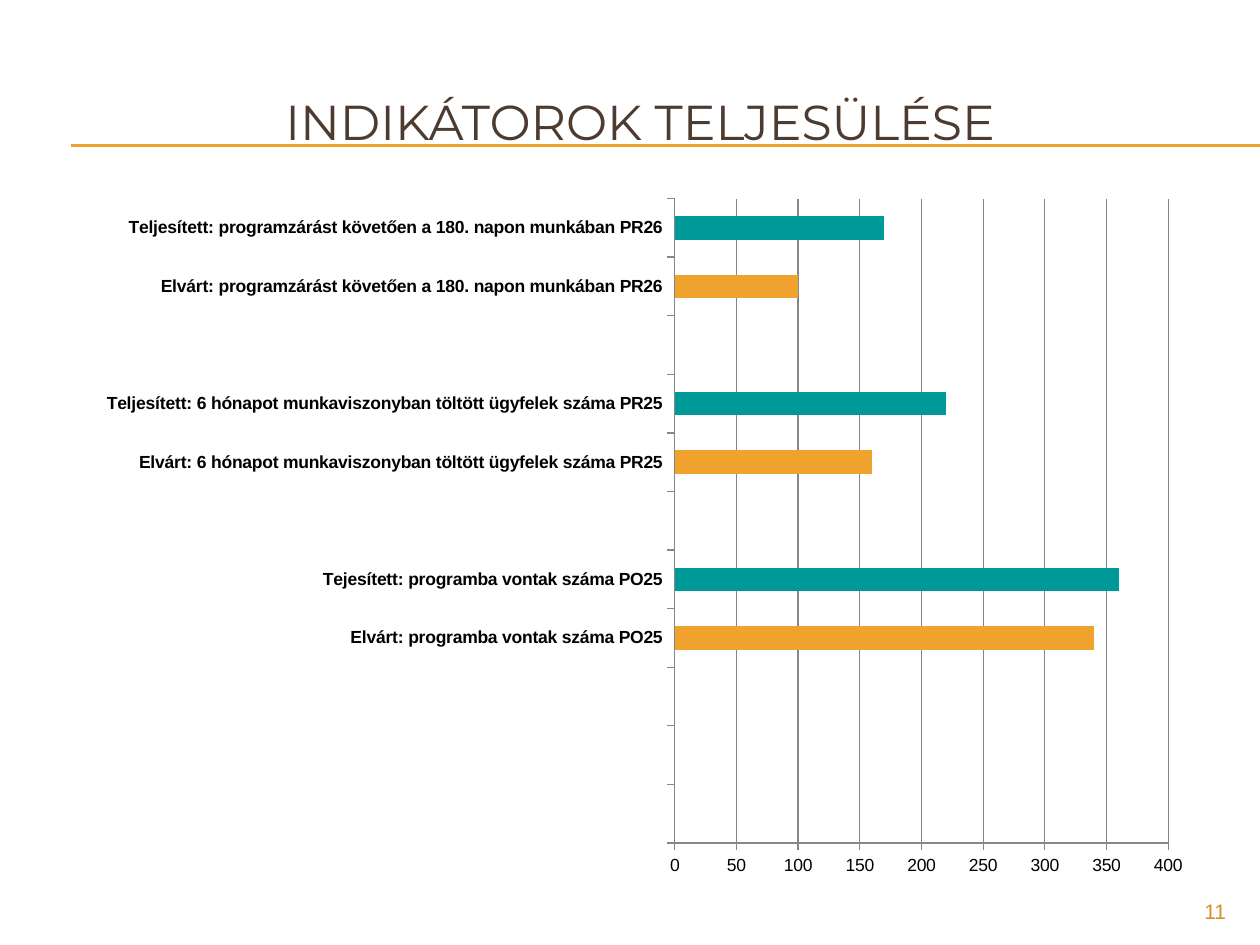
from lxml.etree import SubElement
from pptx import Presentation
from pptx.chart.data import CategoryChartData
from pptx.dml.color import RGBColor
from pptx.enum.chart import XL_CHART_TYPE, XL_TICK_MARK
from pptx.enum.shapes import MSO_CONNECTOR
from pptx.enum.text import MSO_ANCHOR, PP_ALIGN
from pptx.oxml import parse_xml
from pptx.oxml.ns import nsdecls, qn
from pptx.util import Inches, Pt

GOLD, TEAL, GRAY = "F0A22E", "009999", "878787"

# Categories run from the bottom of the chart to the top
ROWS = [
    ("", None), ("", None), ("", None),
    ("Elvárt: programba vontak száma PO25", 340),
    ("Tejesített: programba vontak száma PO25", 360),
    ("", None),
    ("Elvárt: 6 hónapot munkaviszonyban töltött ügyfelek száma PR25", 160),
    ("Teljesített: 6 hónapot munkaviszonyban töltött ügyfelek száma PR25", 220),
    ("", None),
    ("Elvárt: programzárást követően a 180. napon munkában PR26", 100),
    ("Teljesített: programzárást követően a 180. napon munkában PR26", 170),
]
DONE = (4, 7, 10)


def tint(part, color):
    part.solid()
    part.fore_color.rgb = RGBColor.from_string(color)


def place(shape, box):
    shape.left, shape.top, shape.width, shape.height = map(Inches, box)


def write(frame, text, size, face, color, align):
    par = frame.paragraphs[0]
    par.alignment = align
    run = par.add_run()
    run.text = text
    run.font.size = Pt(size)
    run.font.name = face
    run.font.color.rgb = RGBColor.from_string(color)


def add_rule(slide, left, right, top):
    line = slide.shapes.add_connector(
        MSO_CONNECTOR.STRAIGHT, Inches(left), Inches(top), Inches(right), Inches(top))
    line.line.width = Pt(0.75)
    tint(line.line.fill, GOLD)
    SubElement(line._element.spPr, qn("a:effectLst"))
    # Keep the rules behind the title
    slide.shapes._spTree.insert(2, line._element)


def add_title(slide, box):
    title = slide.shapes.title
    place(title, box)
    title.text_frame.vertical_anchor = MSO_ANCHOR.MIDDLE
    write(title.text_frame, "INDIKÁTOROK TELJESÜLÉSE", 28, "Montserrat",
          "4E3B30", PP_ALIGN.CENTER)


def add_number(slide, box):
    note = slide.shapes.add_textbox(*map(Inches, box))
    note.text_frame.word_wrap = True
    write(note.text_frame, "11", 12, "Arial", "D48F29", PP_ALIGN.RIGHT)


def set_axis(axis, bold):
    axis.major_tick_mark = XL_TICK_MARK.OUTSIDE
    axis.minor_tick_mark = XL_TICK_MARK.NONE
    axis.tick_labels.font.size = Pt(10)
    axis.tick_labels.font.bold = bold
    tint(axis.format.line.fill, GRAY)


def set_plot(chart, x, y, w, h):
    # Fix the inner plot area as shares of the chart
    area = chart._chartSpace.chart.plotArea
    for old in area.findall(qn("c:layout")):
        area.remove(old)
    area.insert(0, parse_xml(
        f'<c:layout {nsdecls("c")}><c:manualLayout><c:layoutTarget val="inner"/>'
        '<c:xMode val="edge"/><c:yMode val="edge"/>'
        f'<c:x val="{x}"/><c:y val="{y}"/><c:w val="{w}"/><c:h val="{h}"/>'
        '</c:manualLayout></c:layout>'))


def add_bars(slide, box):
    names, vals = zip(*ROWS)
    data = CategoryChartData()
    data.categories = names
    data.add_series("Series 1", vals)
    chart = slide.shapes.add_chart(
        XL_CHART_TYPE.BAR_CLUSTERED, *map(Inches, box), data).chart
    chart.has_legend = chart.has_title = False
    chart.font.size = Pt(10)
    chart.font.name = "Arial"
    chart.font.color.rgb = RGBColor.from_string("000000")
    set_plot(chart, 0.5265, 0.019, 0.44, 0.915)

    # Axes
    set_axis(chart.category_axis, True)
    scale = chart.value_axis
    set_axis(scale, False)
    scale.minimum_scale, scale.maximum_scale, scale.major_unit = 0, 400, 50
    scale.has_major_gridlines = True
    tint(scale.major_gridlines.format.line.fill, GRAY)

    # Bars: expected in gold, achieved in teal
    plot = chart.plots[0]
    plot.gap_width = 150
    plot.vary_by_categories = False
    bars = plot.series[0]
    tint(bars.format.fill, GOLD)
    for i in DONE:
        tint(bars.points[i].format.fill, TEAL)


def main():
    deck = Presentation()
    deck.slide_width, deck.slide_height = Inches(10), Inches(7.5)
    slide = deck.slides.add_slide(deck.slide_layouts[5])
    for top in (1.15, 1.16):
        add_rule(slide, 0.56, 10, top)
    add_title(slide, (0.33, 0.5, 9.5, 0.92))
    add_number(slide, (9, 7.08, 0.83, 0.27))
    add_bars(slide, (0.67, 1.47, 8.9, 5.59))
    deck.save("out.pptx")


if __name__ == "__main__":
    main()
